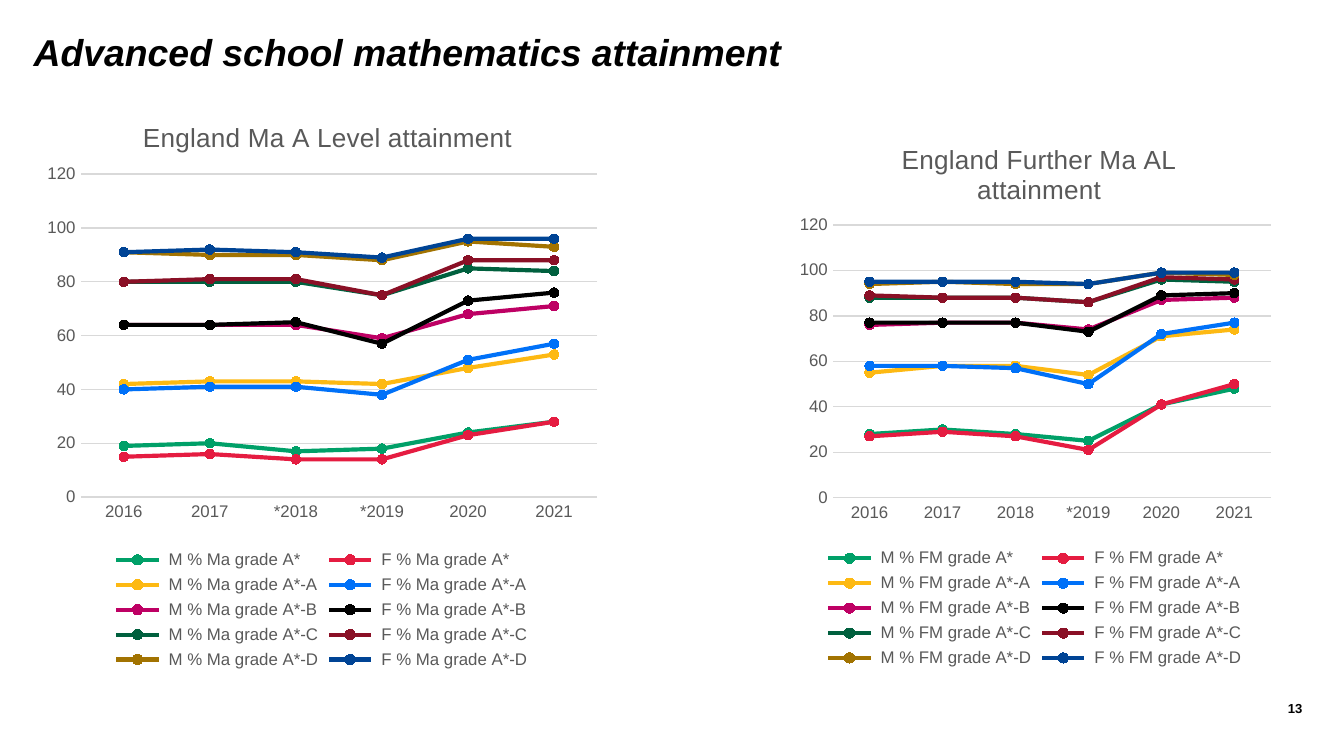
from lxml.etree import SubElement
from pptx import Presentation
from pptx.chart.data import CategoryChartData
from pptx.dml.color import RGBColor
from pptx.enum.chart import XL_CHART_TYPE, XL_LEGEND_POSITION, XL_MARKER_STYLE, XL_TICK_MARK
from pptx.enum.text import PP_ALIGN
from pptx.oxml.ns import qn
from pptx.util import Pt


def style(font, size, color):
    font.name = "Arial"
    font.size = Pt(size)
    font.color.rgb = RGBColor.from_string(color)


def place(element, index, **fractions):
    """Give a chart part a manual layout in fractions of the chart's size."""
    for old in element.findall(qn("c:layout")):
        element.remove(old)
    layout = SubElement(element, qn("c:layout"))
    manual = SubElement(layout, qn("c:manualLayout"))
    if "w" in fractions:
        SubElement(manual, qn("c:layoutTarget")).set("val", "inner")
    for key in "xy":
        SubElement(manual, qn(f"c:{key}Mode")).set("val", "edge")
    for key, value in fractions.items():
        SubElement(manual, qn(f"c:{key}")).set("val", str(value))
    element.insert(index, layout)


GREY, GRID = "595959", "D9D9D9"
COLORS = ["00A068", "E51C41", "FDB913", "0071F8", "BE0064",
          "000000", "00603E", "8A1026", "A27301", "004495"]
GRADES = ["A*", "A*-A", "A*-B", "A*-C", "A*-D"]

# Values run male, female within each grade, in the order of GRADES
CHARTS = [
    dict(title="England Ma A Level attainment", subject="Ma",
         box=(18.7, 49.7, 307.4, 311.8),
         title_at=dict(x=0.18, y=0.04),
         plot_at=dict(x=0.08, y=0.14, w=0.9, h=0.555),
         years=["2016", "2017", "*2018", "*2019", "2020", "2021"],
         values=[(19, 20, 17, 18, 24, 28), (15, 16, 14, 14, 23, 28),
                 (42, 43, 43, 42, 48, 53), (40, 41, 41, 38, 51, 57),
                 (64, 64, 64, 59, 68, 71), (64, 64, 65, 57, 73, 76),
                 (80, 80, 80, 75, 85, 84), (80, 81, 81, 75, 88, 88),
                 (91, 90, 90, 88, 95, 93), (91, 92, 91, 89, 96, 96)]),
    dict(title="England Further Ma AL attainment", subject="FM",
         box=(422.6, 60.5, 263.5, 300.2),
         title_at=dict(x=0.22, y=0.045),
         plot_at=dict(x=0.09, y=0.2, w=0.89, h=0.487),
         years=["2016", "2017", "2018", "*2019", "2020", "2021"],
         values=[(28, 30, 28, 25, 41, 48), (27, 29, 27, 21, 41, 50),
                 (55, 58, 58, 54, 71, 74), (58, 58, 57, 50, 72, 77),
                 (76, 77, 77, 74, 87, 88), (77, 77, 77, 73, 89, 90),
                 (88, 88, 88, 86, 96, 95), (89, 88, 88, 86, 97, 96),
                 (94, 95, 94, 94, 99, 98), (95, 95, 95, 94, 99, 99)]),
]

prs = Presentation()
prs.slide_width, prs.slide_height = Pt(720), Pt(405)
s = prs.slides.add_slide(prs.slide_layouts[6])

# Heading and page number
for text, box, size, italic, align in [
    ("Advanced school mathematics attainment", (18, 19.4, 664.6, 54.7), 20, True, PP_ALIGN.LEFT),
    ("13", (626.4, 375.1, 71.3, 21.6), 7, False, PP_ALIGN.RIGHT),
]:
    tf = s.shapes.add_textbox(*map(Pt, box)).text_frame
    tf.word_wrap = True
    tf.margin_left = tf.margin_right = tf.margin_top = tf.margin_bottom = 0
    tf.text = text
    p = tf.paragraphs[0]
    p.alignment = align
    if size == 20:
        p.line_spacing = Pt(20)
    r = p.runs[0]
    style(r.font, size, "000000")
    r.font.bold, r.font.italic = True, italic

# Attainment charts
for c in CHARTS:
    data = CategoryChartData()
    data.categories = c["years"]
    names = [f" {sex} % {c['subject']} grade {grade}" for grade in GRADES for sex in "MF"]
    for name, values in zip(names, c["values"]):
        data.add_series(name, values)
    chart = s.shapes.add_chart(XL_CHART_TYPE.LINE_MARKERS, *map(Pt, c["box"]), data).chart
    style(chart.font, 10, "000000")

    chart.has_title = True
    tf = chart.chart_title.text_frame
    tf.text = c["title"]
    r = tf.paragraphs[0].runs[0]
    style(r.font, 14, GREY)
    r.font.bold = False
    place(chart.chart_title._element, 1, **c["title_at"])
    place(chart._chartSpace.chart.plotArea, 0, **c["plot_at"])

    chart.has_legend = True
    chart.legend.position = XL_LEGEND_POSITION.BOTTOM
    chart.legend.include_in_layout = False
    style(chart.legend.font, 9, GREY)

    for axis in (chart.category_axis, chart.value_axis):
        axis.major_tick_mark = axis.minor_tick_mark = XL_TICK_MARK.NONE
        style(axis.tick_labels.font, 9, GREY)
    chart.value_axis.minimum_scale, chart.value_axis.maximum_scale = 0, 120
    chart.value_axis.major_unit = 20
    chart.value_axis.format.line.fill.background()
    for line in (chart.category_axis.format.line, chart.value_axis.major_gridlines.format.line):
        line.color.rgb = RGBColor.from_string(GRID)
        line.width = Pt(0.75)

    chart.plots[0].vary_by_categories = False
    for series, color in zip(chart.plots[0].series, COLORS):
        rgb = RGBColor.from_string(color)
        series.smooth = False
        series.format.line.color.rgb = rgb
        series.format.line.width = Pt(2.25)
        series.marker.style = XL_MARKER_STYLE.CIRCLE
        series.marker.size = 5
        series.marker.format.fill.solid()
        series.marker.format.fill.fore_color.rgb = rgb
        series.marker.format.line.color.rgb = rgb

prs.save("out.pptx")
